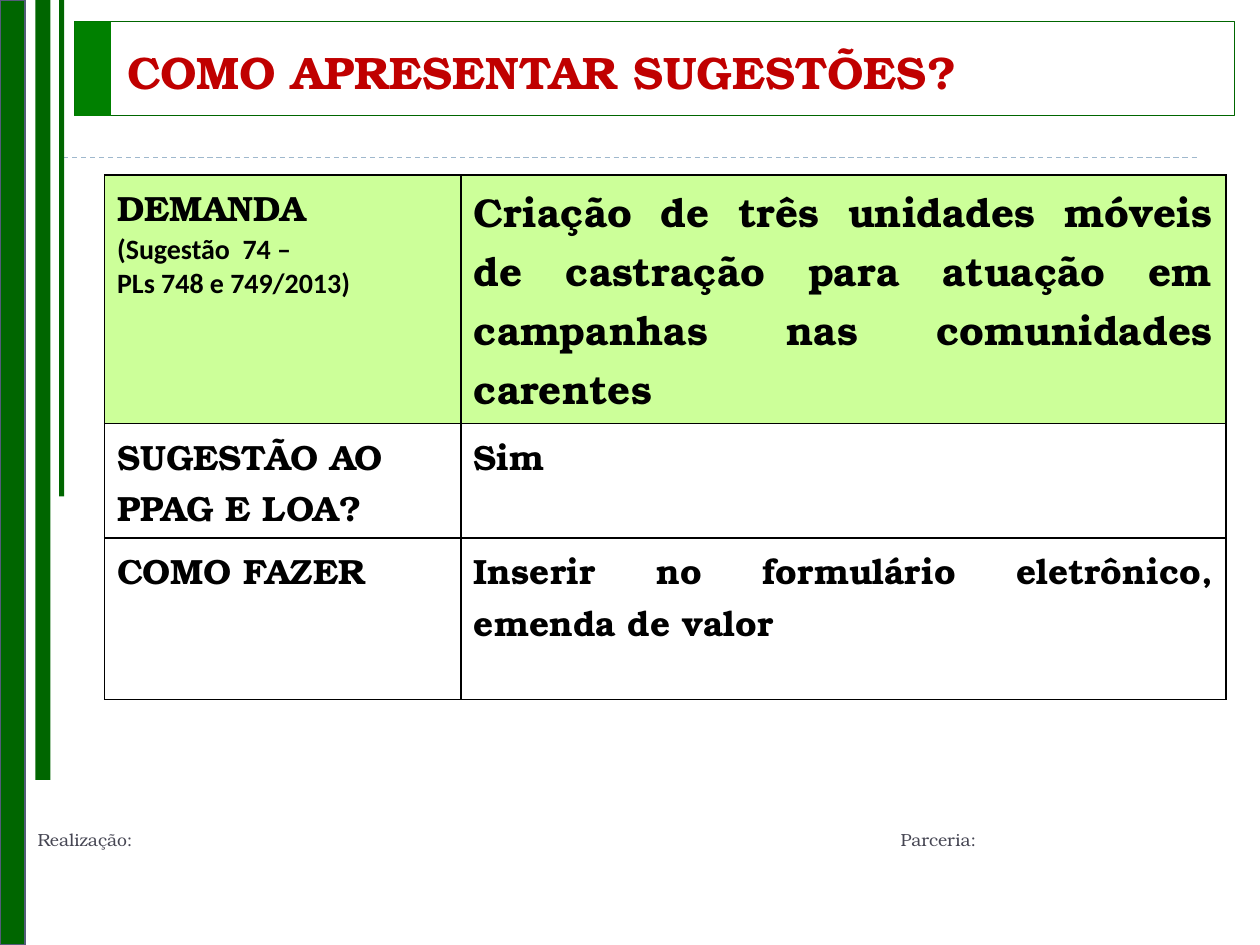
"""Build the slide on how to present suggestions to the plan and budget."""
from dataclasses import dataclass

from lxml import etree
from pptx import Presentation
from pptx.dml.color import RGBColor
from pptx.enum.dml import MSO_LINE
from pptx.enum.shapes import MSO_CONNECTOR, MSO_SHAPE
from pptx.enum.text import MSO_ANCHOR, PP_ALIGN
from pptx.oxml.ns import qn
from pptx.util import Inches, Pt

DASH = MSO_LINE.DASH
STRAIGHT = MSO_CONNECTOR.STRAIGHT
RECTANGLE = MSO_SHAPE.RECTANGLE
MIDDLE = MSO_ANCHOR.MIDDLE
LEFT, JUSTIFY = PP_ALIGN.LEFT, PP_ALIGN.JUSTIFY

SERIF, SANS = "TeX Gyre Bonum", "Calibri"
COLORS = {
    "dark_green": "006600",
    "green": "008000",
    "light_green": "CCFF99",
    "slate": "545C79",
    "rule": "9FB8CD",
    "title": "C00000",
    "footer": "464653",
    "black": "000000",
    "white": "FFFFFF",
}


@dataclass(frozen=True)
class Box:
    left: float
    top: float
    width: float
    height: float
    fill: str | None = None
    line: str | None = None
    weight: float = 0


@dataclass(frozen=True)
class Line:
    text: str
    size: float = 20
    font: str = SERIF
    color: str = "black"
    bold: bool = True


@dataclass(frozen=True)
class Row:
    height: float
    fill: str
    heading: tuple[Line, ...]
    answer: Line


@dataclass(frozen=True)
class Label:
    left: float
    top: float
    width: float
    height: float
    line: Line


STRIPE = Box(0.28, 0, 0.12, 6.19, "dark_green")
BOXES = [
    Box(0.59, 0.17, 9.21, 0.75, line="dark_green", weight=0.5),
    Box(0.59, 0.17, 0.29, 0.75, "green"),
    Box(0, 0, 0.2, 7.5, "dark_green", "slate", 1.5),
    Box(0.47, 0, 0.04, 3.94, "dark_green"),
]
LABELS = [
    Label(0.2, 6.51, 2, 0.31, Line("Realização:", 10, color="footer", bold=False)),
    Label(7.05, 6.51, 2, 0.31, Line("Parceria:", 10, color="footer", bold=False)),
    Label(0.91, 0.29, 8.52, 0.55, Line("COMO APRESENTAR SUGESTÕES?", 26, color="title")),
]
COLUMNS = [2.83, 6.07]
ROWS = [
    Row(1.97, "light_green",
        (Line("DEMANDA"), Line("(Sugestão  74 –", 16, SANS),
         Line("PLs 748 e 749/2013)", 16, SANS)),
        Line("Criação de três unidades móveis de castração para atuação em "
             "campanhas nas comunidades carentes", 23)),
    Row(0.91, "white", (Line("SUGESTÃO AO"), Line("PPAG E LOA?")), Line("Sim")),
    Row(1.28, "white", (Line("COMO FAZER"),),
        Line("Inserir no formulário eletrônico, emenda de valor")),
]


def rgb(name: str) -> RGBColor:
    return RGBColor.from_string(COLORS[name])


def draw_box(slide, box: Box) -> None:
    shape = slide.shapes.add_shape(RECTANGLE, Inches(box.left), Inches(box.top),
                                   Inches(box.width), Inches(box.height))
    shape.shadow.inherit = False
    if box.fill:
        shape.fill.solid()
        shape.fill.fore_color.rgb = rgb(box.fill)
    else:
        shape.fill.background()
    if box.line:
        shape.line.color.rgb = rgb(box.line)
        shape.line.width = Pt(box.weight)
    else:
        shape.line.fill.background()


def draw_rule(slide) -> None:
    rule = slide.shapes.add_connector(STRAIGHT, Inches(0.5), Inches(1.25),
                                      Inches(9.5), Inches(1.25))
    rule.line.color.rgb = rgb("rule")
    rule.line.width = Pt(0.75)
    rule.line.dash_style = DASH
    etree.SubElement(rule.line._get_or_add_ln().getparent(), qn("a:effectLst"))


def write_lines(frame, lines: tuple[Line, ...], alignment=LEFT) -> None:
    for index, line in enumerate(lines):
        paragraph = frame.add_paragraph() if index else frame.paragraphs[0]
        paragraph.alignment = alignment
        run = paragraph.add_run()
        run.text = line.text
        run.font.name = line.font
        run.font.size = Pt(line.size)
        run.font.bold = line.bold
        run.font.color.rgb = rgb(line.color)


def draw_label(slide, label: Label) -> None:
    frame = slide.shapes.add_textbox(Inches(label.left), Inches(label.top),
                                     Inches(label.width), Inches(label.height)).text_frame
    frame.word_wrap = True
    frame.vertical_anchor = MIDDLE
    write_lines(frame, (label.line,))


def style_cell(cell, fill: str) -> None:
    properties = cell._tc.get_or_add_tcPr()
    for side in ("lnL", "lnR", "lnT", "lnB"):
        border = etree.SubElement(properties, qn(f"a:{side}"), w=str(Pt(1)))
        solid = etree.SubElement(border, qn("a:solidFill"))
        etree.SubElement(solid, qn("a:srgbClr"), val=COLORS["black"])
    cell.fill.solid()
    cell.fill.fore_color.rgb = rgb(fill)


def draw_table(slide) -> None:
    table = slide.shapes.add_table(
        len(ROWS), len(COLUMNS), Inches(0.83), Inches(1.39),
        Inches(sum(COLUMNS)), Inches(sum(row.height for row in ROWS))).table
    table.first_row = table.horz_banding = False
    for column, width in zip(table.columns, COLUMNS):
        column.width = Inches(width)
    for index, row in enumerate(ROWS):
        table.rows[index].height = Inches(row.height)
        heading, answer = table.cell(index, 0), table.cell(index, 1)
        write_lines(heading.text_frame, row.heading)
        write_lines(answer.text_frame, (row.answer,), JUSTIFY)
        for cell in (heading, answer):
            style_cell(cell, row.fill)


def main() -> None:
    deck = Presentation()
    deck.slide_width, deck.slide_height = Inches(10), Inches(7.5)
    slide = deck.slides.add_slide(deck.slide_layouts[6])
    draw_box(slide, STRIPE)
    draw_rule(slide)
    for box in BOXES:
        draw_box(slide, box)
    for label in LABELS:
        draw_label(slide, label)
    draw_table(slide)
    deck.save("out.pptx")


if __name__ == "__main__":
    main()
